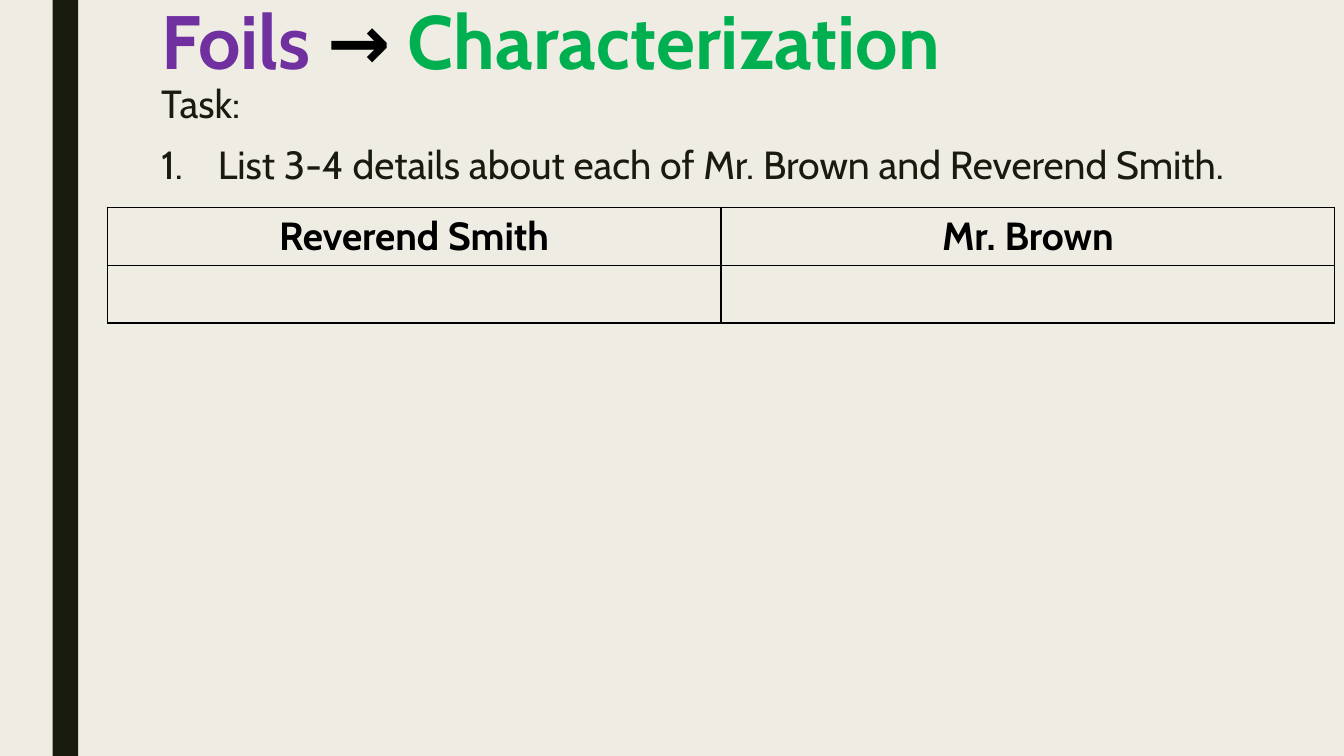
import pptx
import pptx.dml.color
import pptx.enum.shapes
import pptx.enum.text
import pptx.oxml
import pptx.oxml.ns
import pptx.util
from pptx.util import Cm

RGBColor = pptx.dml.color.RGBColor
CREAM = RGBColor(0xEF, 0xED, 0xE3)
INK = RGBColor(0x19, 0x1B, 0x0E)
BLACK = RGBColor(0x00, 0x00, 0x00)
PURPLE = RGBColor(0x70, 0x30, 0xA0)
GREEN = RGBColor(0x00, 0xB0, 0x50)


class FoilsPage:
    font = "Cabin"
    title_size = 54
    body_size = 28

    def __init__(self, deck):
        self.page = deck.slides.add_slide(deck.slide_layouts[6])
        fill = self.page.background.fill
        fill.solid()
        fill.fore_color.rgb = CREAM

    def style(self, span, size, color, bold=False):
        span.font.name = self.font
        span.font.size = pptx.util.Pt(size)
        span.font.color.rgb = color
        span.font.bold = bold

    def bar(self, left, top, width, height):
        bar = self.page.shapes.add_shape(
            pptx.enum.shapes.MSO_SHAPE.RECTANGLE, left, top, width, height)
        bar.shadow.inherit = False
        bar.fill.solid()
        bar.fill.fore_color.rgb = INK
        bar.line.fill.background()

    def text_frame(self, left, top, width, height):
        frame = self.page.shapes.add_textbox(left, top, width, height).text_frame
        frame.word_wrap = True
        frame.vertical_anchor = pptx.enum.text.MSO_ANCHOR.TOP
        return frame

    def title(self, parts, *place):
        para = self.text_frame(*place).paragraphs[0]
        para.line_spacing = 0.89
        for text, color in parts:
            span = para.add_run()
            span.text = text
            self.style(span, self.title_size, color, bold=True)

    def task(self, heading, steps, *place):
        """Write a heading followed by numbered steps."""
        frame = self.text_frame(*place)
        frame.text = "\n".join([heading, *steps])
        for para in frame.paragraphs:
            para.line_spacing = 0.94
            para.space_before = pptx.util.Pt(10)
            para.space_after = pptx.util.Pt(2)
            self.style(para.runs[0], self.body_size, INK)
        for para in frame.paragraphs[1:]:
            self.number(para)

    def number(self, para):
        properties = para._p.get_or_add_pPr()
        properties.set("marL", str(Cm(1.43)))
        properties.set("indent", str(-Cm(1.43)))
        numbering = pptx.oxml.parse_xml(
            f'<a:buAutoNum {pptx.oxml.ns.nsdecls("a")} type="arabicPeriod"/>')
        properties.append(numbering)

    def table(self, headings, row_count, left, top, width, height):
        table = self.page.shapes.add_table(
            row_count, len(headings), left, top, width, height).table
        for cell in table.iter_cells():
            cell.fill.background()
            self.border(cell)
        for cell, heading in zip(table.rows[0].cells, headings):
            cell.text_frame.text = heading
            para = cell.text_frame.paragraphs[0]
            para.alignment = pptx.enum.text.PP_ALIGN.CENTER
            self.style(para.runs[0], self.body_size, BLACK, bold=True)

    def border(self, cell):
        properties = cell._tc.get_or_add_tcPr()
        for position, side in enumerate(("lnL", "lnR", "lnT", "lnB")):
            line = pptx.oxml.parse_xml(
                f'<a:{side} {pptx.oxml.ns.nsdecls("a")} w="{pptx.util.Pt(1)}">'
                f'<a:solidFill><a:srgbClr val="{BLACK}"/></a:solidFill></a:{side}>')
            properties.insert(position, line)


def main():
    deck = pptx.Presentation()
    deck.slide_width, deck.slide_height = Cm(33.87), Cm(19.05)
    foils = FoilsPage(deck)
    foils.bar(Cm(1.33), Cm(0), Cm(0.64), deck.slide_height)
    foils.title(
        [("Foils ", PURPLE), ("→ ", BLACK), ("Characterization", GREEN)],
        Cm(3.81), Cm(0), Cm(26.67), Cm(1.98))
    foils.task(
        "Task:",
        ["List 3-4 details about each of Mr. Brown and Reverend Smith."],
        Cm(3.81), Cm(1.98), Cm(28.55), Cm(15.98))
    foils.table(["Reverend Smith", "Mr. Brown"], 2,
                Cm(2.7), Cm(5.22), Cm(30.94), Cm(2.92))
    deck.save("out.pptx")


if __name__ == "__main__":
    main()
